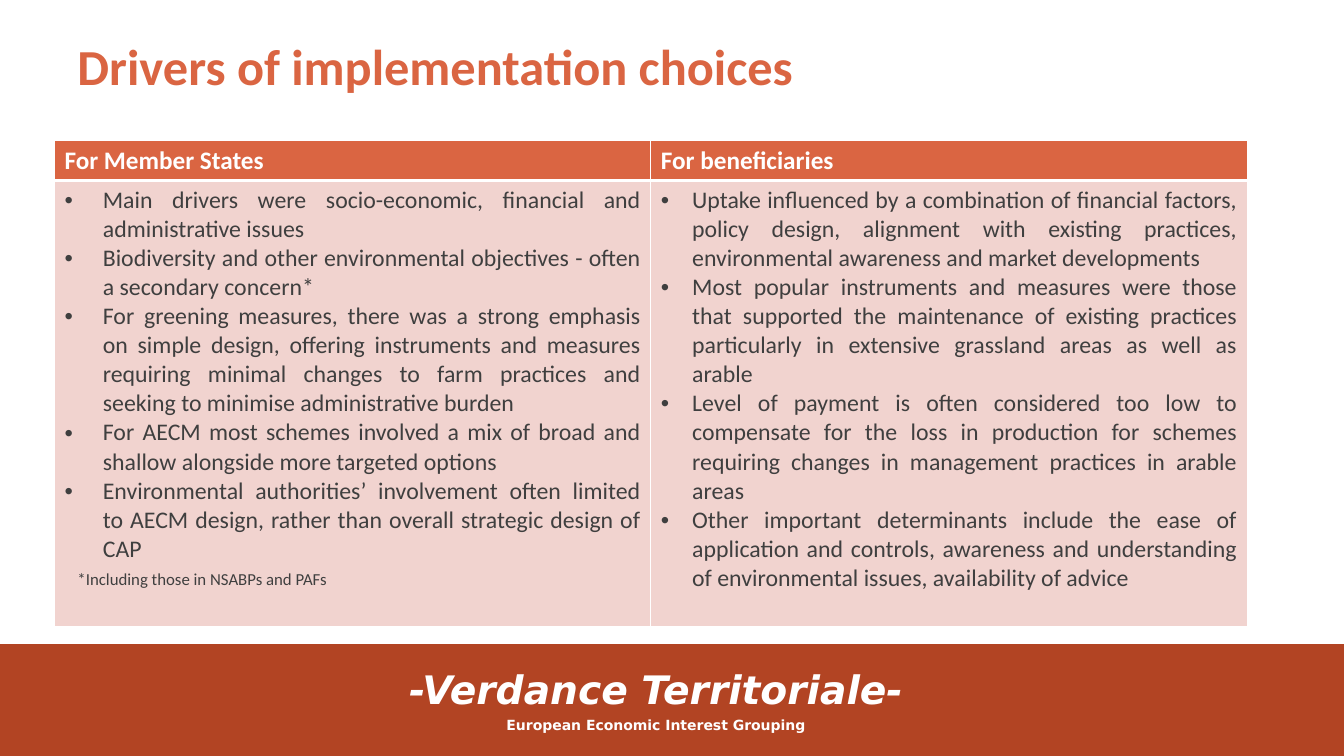
from lxml import etree
from pptx import Presentation
from pptx import util as u
from pptx.dml.color import RGBColor
from pptx.enum import shapes, text
from pptx.oxml.ns import qn

WIDTH, HEIGHT = 13.33, 7.5
WHITE = RGBColor(0xFF, 0xFF, 0xFF)
ORANGE = RGBColor(0xDA, 0x65, 0x42)
RUST = RGBColor(0xB2, 0x44, 0x23)
PINK = RGBColor(0xF1, 0xD3, 0xCF)
GREY = RGBColor(0x3F, 0x3F, 0x3F)
LEFT, CENTER, JUSTIFY = text.PP_ALIGN.LEFT, text.PP_ALIGN.CENTER, text.PP_ALIGN.JUSTIFY

COLUMNS = [
    ("For Member States", 0.38, [
        "Main drivers were socio-economic, financial and administrative issues",
        "Biodiversity and other environmental objectives - often a secondary concern*",
        "For greening measures, there was a strong emphasis on simple design, offering "
        "instruments and measures requiring minimal changes to farm practices and "
        "seeking to minimise administrative burden",
        "For AECM most schemes involved a mix of broad and shallow alongside more "
        "targeted options",
        "Environmental authorities’ involvement often limited to AECM design, rather "
        "than overall strategic design of CAP",
    ]),
    ("For beneficiaries", 0.31, [
        "Uptake influenced by a combination of financial factors, policy design, "
        "alignment with existing practices, environmental awareness and market "
        "developments",
        "Most popular instruments and measures were those that supported the "
        "maintenance of existing practices particularly in extensive grassland areas "
        "as well as arable",
        "Level of payment is often considered too low to compensate for the loss in "
        "production for schemes requiring changes in management practices in arable "
        "areas",
        "Other important determinants include the ease of application and controls, "
        "awareness and understanding of environmental issues, availability of advice",
    ]),
]


def inches(box):
    return [u.Inches(length) for length in box]


def write(frame, words, size, color, font="Calibri", bold=False, italic=False,
          align=LEFT, before=0, indent=0):
    para = frame.paragraphs[0]
    if para.runs:
        para = frame.add_paragraph()
    para.alignment = align
    para.space_before = u.Pt(before)
    span = para.add_run()
    span.text = words
    span.font.size = u.Pt(size)
    span.font.name = font
    span.font.bold = bold
    span.font.italic = italic
    span.font.color.rgb = color
    if indent:
        properties = para._p.get_or_add_pPr()
        properties.set("marL", str(u.Inches(indent)))
        properties.set("indent", str(-u.Inches(indent)))
        etree.SubElement(properties, qn("a:buFont"), typeface="Arial")
        etree.SubElement(properties, qn("a:buChar"), char="•")


def add_frame(page, box):
    frame = page.shapes.add_textbox(*inches(box)).text_frame
    frame.word_wrap = True
    return frame


def paint_cell(cell, color, bottom):
    properties = cell._tc.get_or_add_tcPr()
    for side, width in (("L", 1), ("R", 1), ("T", 1), ("B", bottom)):
        line = etree.SubElement(properties, qn("a:ln" + side), w=str(u.Pt(width)))
        fill = etree.SubElement(line, qn("a:solidFill"))
        etree.SubElement(fill, qn("a:srgbClr"), val=str(WHITE))
    cell.fill.solid()
    cell.fill.fore_color.rgb = color


def add_footer(page, box):
    left, top, width, height = box
    band = page.shapes.add_shape(shapes.MSO_SHAPE.RECTANGLE, *inches(box))
    band.shadow.inherit = False
    band.fill.solid()
    band.fill.fore_color.rgb = RUST
    band.line.fill.background()
    frame = add_frame(page, (left - 0.16, top + 0.16, width, 0.79))
    style = dict(color=WHITE, font="DejaVu Sans", bold=True, align=CENTER, before=3)
    write(frame, "-Verdance Territoriale-", 28, italic=True, **style)
    write(frame, "European Economic Interest Grouping", 10, **style)


def add_title(page, box):
    write(add_frame(page, box), "Drivers of implementation choices", 36, ORANGE, bold=True)


def add_drivers(page, box, header_height=0.4):
    left, top, width, height = box
    table = page.shapes.add_table(2, len(COLUMNS), *inches(box)).table
    table.rows[0].height = u.Inches(header_height)
    table.rows[1].height = u.Inches(height - header_height)
    for column, (heading, indent, points) in enumerate(COLUMNS):
        table.columns[column].width = u.Inches(width / len(COLUMNS))
        header, body = table.cell(0, column), table.cell(1, column)
        paint_cell(header, ORANGE, 3)
        paint_cell(body, PINK, 1)
        write(header.text_frame, heading, 18, WHITE, bold=True)
        for point in points:
            write(body.text_frame, point, 17, GREY, align=JUSTIFY, indent=indent)
    note = add_frame(page, (left + 0.13, top + 4.2, 4.44, 0.3))
    write(note, "*Including those in NSABPs and PAFs", 12, GREY)


def main():
    deck = Presentation()
    deck.slide_width, deck.slide_height = inches((WIDTH, HEIGHT))
    page = deck.slides.add_slide(deck.slide_layouts[6])
    add_footer(page, (0, HEIGHT - 1.11, WIDTH, 1.11))
    add_title(page, (0.67, 0.3, 12, 1.25))
    add_drivers(page, (0.54, 1.39, 11.83, 4.83))
    deck.save("out.pptx")


if __name__ == "__main__":
    main()
